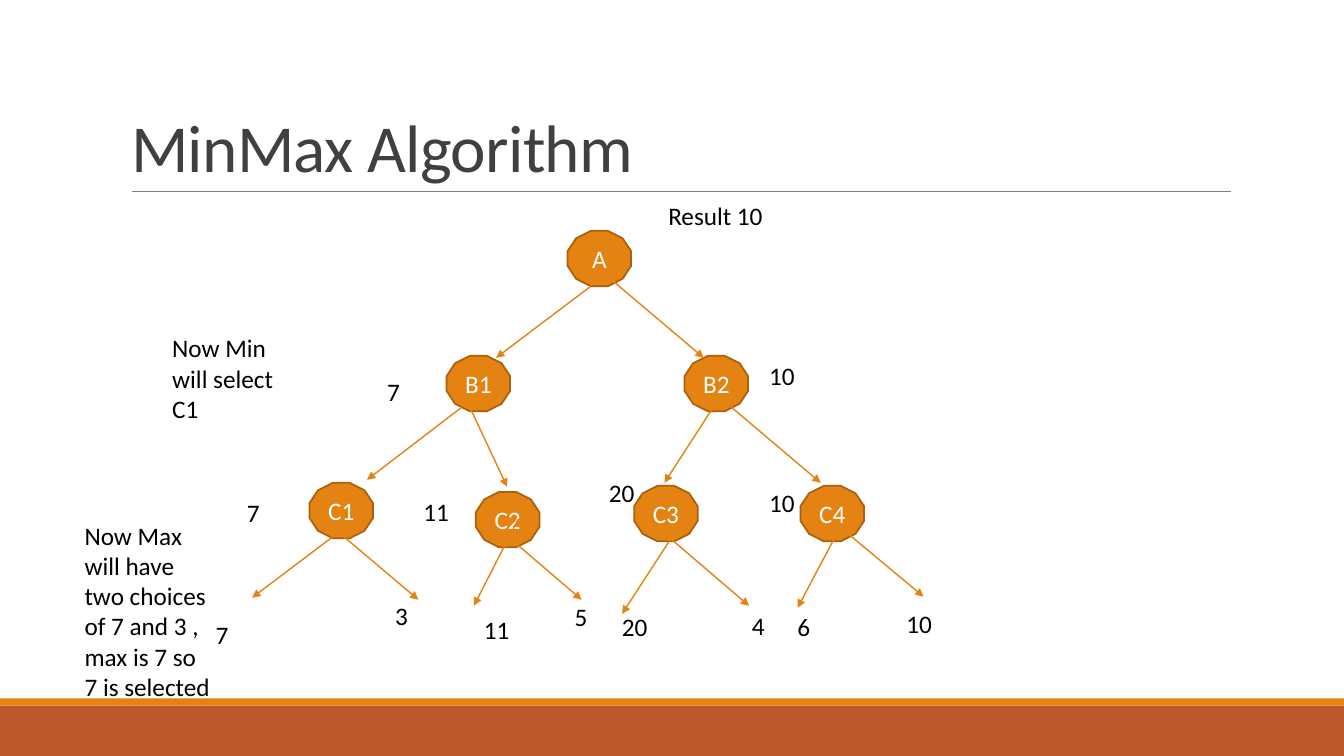
"""Build the MinMax Algorithm slide: a game tree with values and remarks."""
from dataclasses import dataclass

from lxml import etree
from pptx import Presentation, util as u
from pptx.dml.color import RGBColor
from pptx.enum import shapes, text
from pptx.oxml.ns import qn

COLORS = {
    "orange": "E48312", "rust": "BD582C", "outline": "A9610D", "rule": "808080",
    "title": "404040", "black": "000000", "white": "FFFFFF",
}
FONT = "Calibri"
NODE_W, NODE_H = 0.63, 0.55


@dataclass
class Node:
    name: str
    x: float
    y: float


@dataclass
class Line:
    x1: float
    y1: float
    x2: float
    y2: float


@dataclass
class Label:
    words: str
    x: float
    y: float
    w: float = 0.65
    h: float = 0.4


@dataclass
class Band:
    y: float
    h: float
    color: str


BANDS = [Band(7, 0.5, "rust"), Band(6.93, 0.07, "orange")]
TITLE_RULE = Line(1.31, 1.9, 12.21, 1.9)
NODES = [
    Node("A", 5.63, 2.29),
    Node("B1", 4.43, 3.53), Node("B2", 6.79, 3.53),
    Node("C1", 3.07, 4.79), Node("C2", 4.72, 4.88),
    Node("C3", 6.29, 4.82), Node("C4", 7.94, 4.82),
]
ROOT_ARROWS = [Line(5.86, 2.84, 4.92, 3.55), Line(6.07, 2.78, 6.98, 3.55)]
ARROWS = [
    Line(4.58, 4.04, 3.64, 4.76), Line(4.65, 4.02, 5.03, 4.83),
    Line(7.1, 4, 6.59, 4.79), Line(7.23, 4.02, 8.14, 4.79),
    Line(3.44, 5.22, 2.5, 5.93), Line(3.24, 5.18, 4.15, 5.95),
    Line(5.14, 5.15, 4.7, 6.01), Line(4.87, 5.18, 5.77, 5.95),
    Line(6.76, 5.18, 6.17, 6.09), Line(6.53, 5.24, 7.43, 6.01),
    Line(8.35, 5.2, 7.91, 6.03), Line(8.25, 5.16, 9.16, 5.92),
]
LABELS = [
    Label("7", 2.04, 6.09), Label("3", 3.82, 5.91),
    Label("11", 4.7, 6.05), Label("5", 5.6, 5.92),
    Label("20", 6.07, 6.02), Label("4", 7.36, 6.01),
    Label("6", 7.81, 6.02), Label("10", 8.89, 5.99),
    Label("7", 2.35, 4.88, 0.35), Label("11", 4.1, 4.87, 0.46),
    Label("20", 5.94, 4.69, 0.52), Label("10", 7.53, 4.79, 0.51),
    Label("7", 3.74, 3.68, 0.55), Label("10", 7.53, 3.53, 0.6),
    Label("Result 10", 6.53, 1.94, 1.43),
    Label("Now Min will select C1", 1.61, 3.25, 1.45, 1.01),
    Label("Now Max will have two choices of 7 and 3 , max is 7 so 7 is selected",
          0.74, 5.11, 1.45, 1.92),
]


def rgb(name: str) -> RGBColor:
    return RGBColor.from_string(COLORS[name])


def write(tf, words: str, *, size: float = 18, color: str = "black",
          align=text.PP_ALIGN.LEFT, anchor=text.MSO_ANCHOR.TOP,
          spacing: float = 1.0, tracking: int = 0) -> None:
    tf.word_wrap = True
    tf.auto_size = text.MSO_AUTO_SIZE.NONE
    tf.vertical_anchor = anchor
    p = tf.paragraphs[0]
    p.alignment = align
    p.line_spacing = spacing
    r = p.add_run()
    r.text = words
    r.font.size = u.Pt(size)
    r.font.name = FONT
    r.font.color.rgb = rgb(color)
    if tracking:
        r.font._element.set("spc", str(tracking))


def add_filled(slide, kind, x: float, y: float, w: float, h: float, color: str):
    sp = slide.shapes.add_shape(kind, u.Inches(x), u.Inches(y), u.Inches(w), u.Inches(h))
    sp.shadow.inherit = False
    sp.fill.solid()
    sp.fill.fore_color.rgb = rgb(color)
    sp.line.fill.background()
    return sp


def add_node(slide, node: Node) -> None:
    sp = add_filled(slide, shapes.MSO_SHAPE.DODECAGON, node.x, node.y,
                    NODE_W, NODE_H, "orange")
    sp.line.color.rgb = rgb("outline")
    sp.line.width = u.Pt(1.25)
    write(sp.text_frame, node.name, color="white",
          align=text.PP_ALIGN.CENTER, anchor=text.MSO_ANCHOR.MIDDLE)


def add_line(slide, line: Line, color: str = "orange", width: float = 1,
             arrow: bool = True) -> None:
    cx = slide.shapes.add_connector(
        shapes.MSO_CONNECTOR.STRAIGHT, u.Inches(line.x1), u.Inches(line.y1),
        u.Inches(line.x2), u.Inches(line.y2))
    cx.line.color.rgb = rgb(color)
    cx.line.width = u.Pt(width)
    if arrow:
        etree.SubElement(cx.line._get_or_add_ln(), qn("a:tailEnd"), type="triangle")
    etree.SubElement(cx._element.spPr, qn("a:effectLst"))


def add_label(slide, label: Label) -> None:
    sp = slide.shapes.add_textbox(u.Inches(label.x), u.Inches(label.y),
                                  u.Inches(label.w), u.Inches(label.h))
    write(sp.text_frame, label.words)


def add_title(slide, words: str) -> None:
    sp = slide.shapes.title
    sp.left, sp.top = u.Inches(1.2), u.Inches(0.31)
    sp.width, sp.height = u.Inches(11), u.Inches(1.59)
    write(sp.text_frame, words, size=48, color="title",
          anchor=text.MSO_ANCHOR.BOTTOM, spacing=0.85, tracking=-50)


def main() -> None:
    prs = Presentation()
    prs.slide_width, prs.slide_height = u.Inches(13.33), u.Inches(7.5)
    slide = prs.slides.add_slide(prs.slide_layouts[5])
    for band in BANDS:
        add_filled(slide, shapes.MSO_SHAPE.RECTANGLE, 0, band.y, 13.33, band.h, band.color)
    add_line(slide, TITLE_RULE, color="rule", width=0.5, arrow=False)
    add_title(slide, "MinMax Algorithm")
    for node in NODES:
        add_node(slide, node)
    for line in ROOT_ARROWS + ARROWS:
        add_line(slide, line)
    for label in LABELS:
        add_label(slide, label)
    prs.save("out.pptx")


if __name__ == "__main__":
    main()
